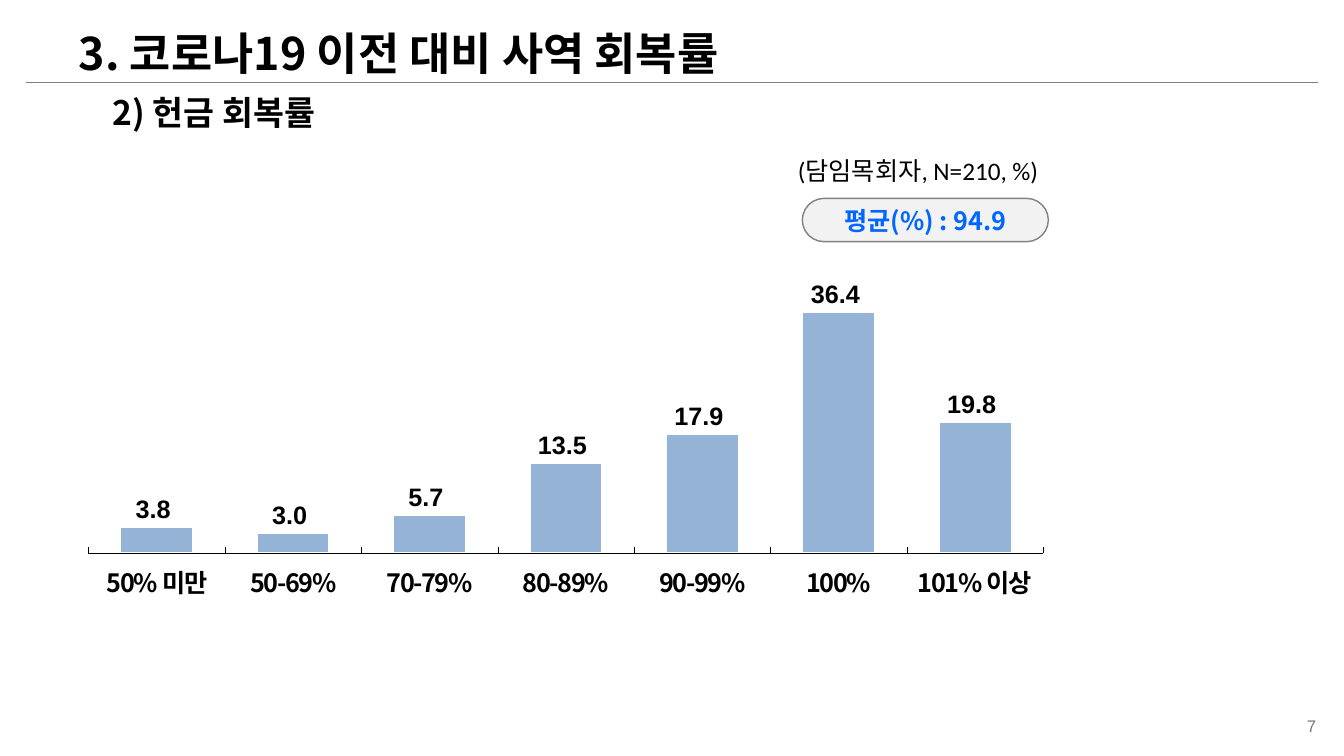
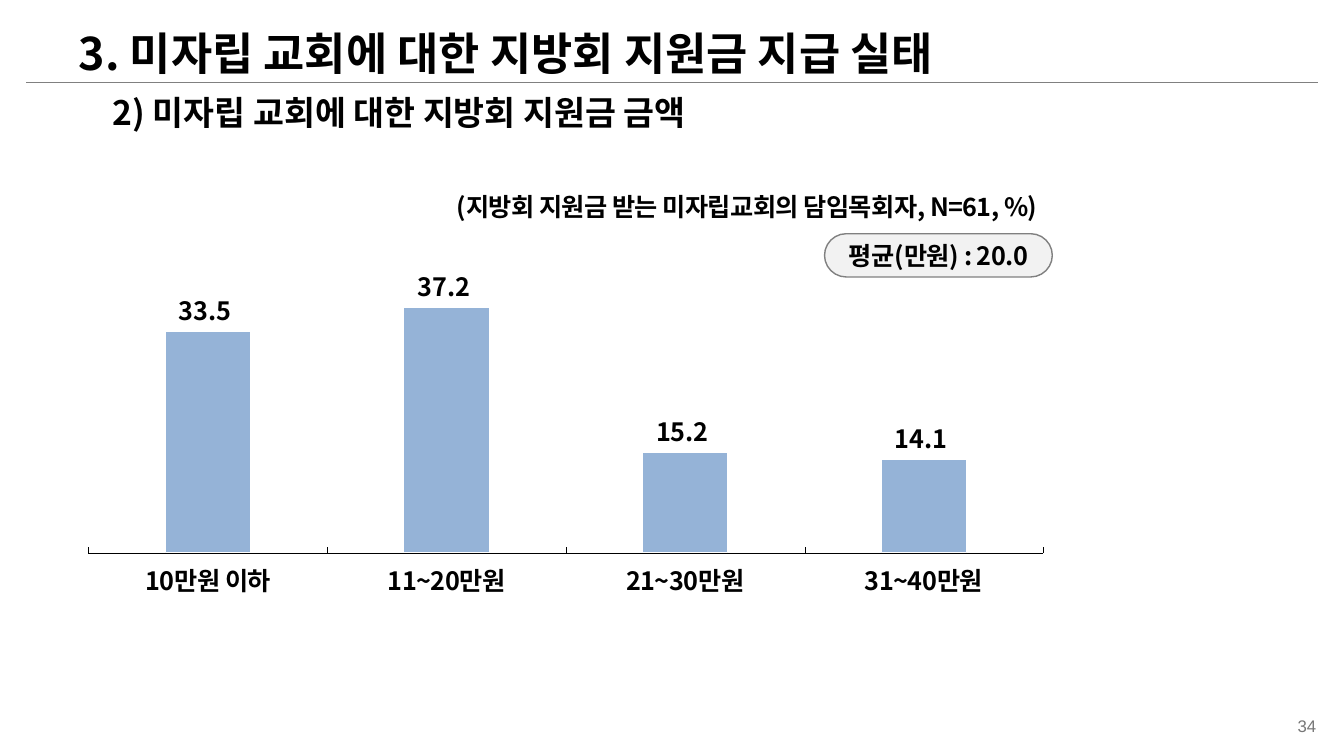
from lxml import etree
from pptx import Presentation
from pptx.chart.data import CategoryChartData
from pptx.dml.color import RGBColor
from pptx.enum.chart import XL_CHART_TYPE, XL_LABEL_POSITION, XL_TICK_LABEL_POSITION, XL_TICK_MARK
from pptx.enum.shapes import MSO_CONNECTOR, MSO_SHAPE
from pptx.enum.text import MSO_ANCHOR, MSO_AUTO_SIZE, PP_ALIGN
from pptx.oxml import parse_xml
from pptx.oxml.ns import nsdecls, qn
from pptx.util import Cm, Pt

LEFT, CENTER, RIGHT = PP_ALIGN.LEFT, PP_ALIGN.CENTER, PP_ALIGN.RIGHT
TOP, MIDDLE, BOTTOM = MSO_ANCHOR.TOP, MSO_ANCHOR.MIDDLE, MSO_ANCHOR.BOTTOM
COLUMNS = XL_CHART_TYPE.COLUMN_CLUSTERED
OUTSIDE_END = XL_LABEL_POSITION.OUTSIDE_END
NO_LABELS = XL_TICK_LABEL_POSITION.NONE
TICK_INSIDE, TICK_NONE = XL_TICK_MARK.INSIDE, XL_TICK_MARK.NONE

KOREAN, LATIN, NOTE = "Noto Sans CJK KR", "Arial", "Calibri"
COLORS = {
    "text": "000000", "accent": "0066FF", "muted": "777777", "rule": "808080",
    "pill": "F2F2F2", "bar": "95B3D7", "bar_edge": "FFFFFF",
}

# Positions are left, top, width, height in centimetres
SLIDES = [
    {
        "number": "7",
        "title": "3. 코로나19 이전 대비 사역 회복률",
        "subtitle": "2) 헌금 회복률",
        "base": "(담임목회자, N=210, %)",
        "base_at": (19.86, 3.78, 6.88, 1.02),
        "base_style": {"font_name": NOTE, "bold": False},
        "average": "평균(%) : 94.9",
        "average_at": (20.22, 5, 6.2, 1.09),
        "average_style": {"color": "accent"},
        "rates": {"50% 미만": 3.8, "50-69%": 3.0, "70-79%": 5.7, "80-89%": 13.5,
                  "90-99%": 17.9, "100%": 36.4, "101% 이상": 19.8},
        "gap": 90, "label_font": LATIN, "plot_top": 0.09,
        "category_top": 14.07, "category_spacing": -1,
    },
    {
        "number": "34",
        "title": "3. 미자립 교회에 대한 지방회 지원금 지급 실태",
        "subtitle": "2) 미자립 교회에 대한 지방회 지원금 금액",
        "base": "(지방회 지원금 받는 미자립교회의 담임목회자, N=61, %)",
        "base_at": (10.39, 4.7, 16.87, 1.02),
        "base_style": {"align": CENTER, "spacing": -0.4},
        "average": "평균(만원) : 20.0",
        "average_at": (20.78, 5.89, 5.74, 1.09),
        "average_style": {"spacing": -0.4},
        "rates": {"10만원 이하": 33.5, "11~20만원": 37.2, "21~30만원": 15.2, "31~40만원": 14.1},
        "gap": 180, "label_font": KOREAN, "plot_top": 0.09,
        "category_top": 14.02, "category_spacing": -0.4,
    },
]


def rgb(name):
    return RGBColor.from_string(COLORS[name])


def write(frame, text, size, font_name=KOREAN, color="text", bold=True, align=LEFT, spacing=0):
    """Fill a text frame with one paragraph in one style."""
    paragraph = frame.paragraphs[0]
    paragraph.text = text
    paragraph.alignment = align
    font = paragraph.font
    font.size, font.bold, font.name = Pt(size), bold, font_name
    font.color.rgb = rgb(color)
    # East Asian font and letter spacing
    defaults = paragraph._p.pPr.find(qn("a:defRPr"))
    etree.SubElement(defaults, qn("a:ea")).set("typeface", KOREAN)
    if spacing:
        defaults.set("spc", str(round(spacing * 100)))
    return paragraph


prs = Presentation()
prs.slide_width, prs.slide_height = Cm(33.87), Cm(19.05)
title_only = prs.slide_layouts[5]

for content in SLIDES:
    slide = prs.slides.add_slide(title_only)
    shapes = slide.shapes

    # Title
    title = shapes.title
    title.left, title.top, title.width, title.height = Cm(1.73), Cm(0.51), Cm(30), Cm(1.63)
    title.text_frame.auto_size = MSO_AUTO_SIZE.NONE
    title.text_frame.vertical_anchor = TOP
    write(title.text_frame, content["title"], 32)

    # Rule under the title
    rule = shapes.add_connector(MSO_CONNECTOR.STRAIGHT, Cm(0.66), Cm(2.08), Cm(33.22), Cm(2.08))
    rule.line.color.rgb = rgb("rule")
    rule.line.width = Pt(1)
    etree.SubElement(rule._element.spPr, qn("a:effectLst"))

    # Column chart
    chart_data = CategoryChartData(number_format="0.0")
    chart_data.categories = list(content["rates"])
    chart_data.add_series("비율", list(content["rates"].values()))
    chart = shapes.add_chart(COLUMNS, Cm(1.73), Cm(4.77), Cm(25.02), Cm(9.47), chart_data).chart
    chart.has_legend = chart.has_title = False
    chart.font.size, chart.font.bold, chart.font.name = Pt(9), True, LATIN
    chart.font.color.rgb = rgb("text")

    category_axis, value_axis = chart.category_axis, chart.value_axis
    category_axis.tick_label_position = value_axis.tick_label_position = NO_LABELS
    category_axis.major_tick_mark = TICK_INSIDE
    category_axis.format.line.color.rgb = rgb("text")
    category_axis.format.line.width = Pt(0.25)
    value_axis.major_tick_mark = TICK_NONE
    value_axis.format.line.fill.background()
    value_axis.has_major_gridlines = False
    value_axis.minimum_scale, value_axis.maximum_scale = 0, 50

    plot = chart.plots[0]
    plot.gap_width, plot.overlap, plot.vary_by_categories = content["gap"], -5, False
    bars = plot.series[0].format
    bars.fill.solid()
    bars.fill.fore_color.rgb = rgb("bar")
    bars.line.color.rgb = rgb("bar_edge")
    bars.line.width = Pt(0.75)

    plot.has_data_labels = True
    labels = plot.data_labels
    labels.show_value, labels.position = True, OUTSIDE_END
    labels.number_format, labels.number_format_is_linked = "0.0_ ", False
    labels.font.size, labels.font.bold, labels.font.name = Pt(18), True, content["label_font"]
    labels.font.color.rgb = rgb("text")

    # Fixed inner plot area, so the bars line up with the category table
    plot_area = chart._chartSpace.chart.plotArea
    for old_layout in plot_area.findall(qn("c:layout")):
        plot_area.remove(old_layout)
    plot_area.insert(0, parse_xml(
        f'<c:layout {nsdecls("c")}><c:manualLayout><c:layoutTarget val="inner"/>'
        '<c:xMode val="edge"/><c:yMode val="edge"/>'
        f'<c:x val="0.02"/><c:y val="{content["plot_top"]}"/>'
        '<c:w val="0.962"/><c:h val="0.878"/></c:manualLayout></c:layout>'))

    # Category names
    categories = shapes.add_table(1, len(content["rates"]), Cm(2.24), Cm(content["category_top"]),
                                  Cm(24.05), Cm(1.19)).table
    categories.first_row = categories.horz_banding = False
    for cell, name in zip(categories.rows[0].cells, content["rates"]):
        cell.fill.background()
        cell.margin_left = cell.margin_right = cell.margin_top = Cm(0.03)
        cell.margin_bottom = 0
        label = write(cell.text_frame, name, 18, align=CENTER, spacing=content["category_spacing"])
        label.line_spacing = 1.1

    # Average
    average = shapes.add_shape(MSO_SHAPE.ROUNDED_RECTANGLE, *map(Cm, content["average_at"]))
    average.adjustments[0] = 0.5
    average.shadow.inherit = False
    average.fill.solid()
    average.fill.fore_color.rgb = rgb("pill")
    average.line.color.rgb = rgb("rule")
    average.line.width = Pt(1)
    frame = average.text_frame
    frame.margin_left = frame.margin_right = frame.margin_top = frame.margin_bottom = 0
    frame.vertical_anchor = MIDDLE
    write(frame, content["average"], 18, align=CENTER, **content["average_style"])

    # Survey base
    base = shapes.add_textbox(*map(Cm, content["base_at"])).text_frame
    base.word_wrap = False
    write(base, content["base"], 18, **content["base_style"])

    # Subtitle
    subtitle = shapes.add_textbox(Cm(2.59), Cm(2.18), Cm(24), Cm(1.27)).text_frame
    subtitle.word_wrap = True
    write(subtitle, content["subtitle"], 24)

    # Page number
    number = shapes.add_textbox(Cm(31.62), Cm(17.91), Cm(1.7), Cm(0.76)).text_frame
    number.word_wrap = True
    number.vertical_anchor = BOTTOM
    number.margin_left = number.margin_right = Cm(0.15)
    write(number, content["number"], 12, LATIN, "muted", bold=False, align=RIGHT)

prs.save("out.pptx")
